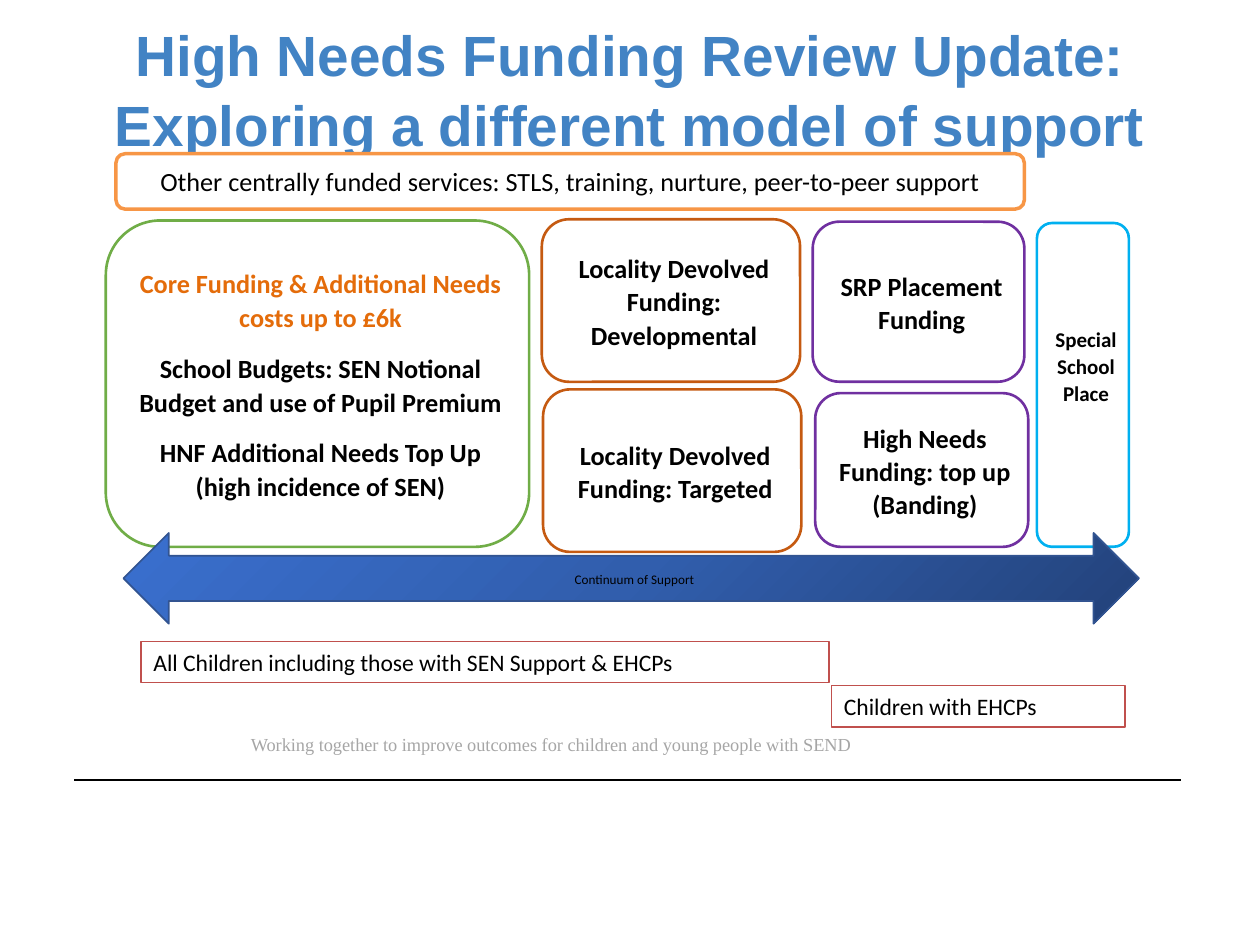
from dataclasses import dataclass
from lxml import etree
from pptx import Presentation
from pptx.dml.color import RGBColor
from pptx.enum.shapes import MSO_CONNECTOR, MSO_SHAPE
from pptx.enum.text import MSO_ANCHOR, PP_ALIGN
from pptx.oxml import parse_xml
from pptx.oxml.ns import nsdecls, qn
from pptx.util import Inches, Length, Pt

ROUND = MSO_SHAPE.ROUNDED_RECTANGLE
RECT = MSO_SHAPE.RECTANGLE
ARROW = MSO_SHAPE.LEFT_RIGHT_ARROW
STRAIGHT = MSO_CONNECTOR.STRAIGHT
MIDDLE, TOP = MSO_ANCHOR.MIDDLE, MSO_ANCHOR.TOP
LEFT, CENTER = PP_ALIGN.LEFT, PP_ALIGN.CENTER
WIDE, HIGH = Inches(10), Inches(7.5)
COLS, ROWS = 100, 75


@dataclass(frozen=True)
class Theme:
    """Colours, fonts and type sizes of the slide."""
    white: str = "FFFFFF"
    black: str = "000000"
    grey: str = "A6A6A6"
    title: str = "4283C4"
    accent: str = "E46C0A"
    amber: str = "F79646"
    green: str = "70AD47"
    rust: str = "C55A11"
    purple: str = "7030A0"
    sky: str = "00B0F0"
    red: str = "C0504D"
    edge: str = "325491"
    fade: tuple[str, ...] = ("23427A", "315EAD", "3A6FCE")
    sans: str = "Calibri"
    serif: str = "Times New Roman"
    head: str = "Arial"
    huge: float = 32.4
    body: float = 15
    label: float = 13.5
    small: float = 12
    foot: float = 10.5
    tiny: float = 7.5


T = Theme()


@dataclass(frozen=True)
class Area:
    """A place on the grid, in columns and rows."""
    col: float
    row: float
    cols: float
    rows: float


@dataclass(frozen=True)
class Style:
    """How the text of one element is set."""
    size: float
    font: str = T.sans
    color: str = T.black
    bold: bool = False
    align: PP_ALIGN = CENTER
    anchor: MSO_ANCHOR = MIDDLE
    pitch: float = 1
    spaced: bool = False
    side: float = 0.1
    base: float = 0.05


@dataclass(frozen=True)
class Box:
    """An outlined shape with its text."""
    area: Area
    lines: tuple[str, ...]
    edge: str
    style: Style
    kind: MSO_SHAPE = ROUND
    width: float = 1.5
    fill: str | None = T.white


CARD = Style(T.body, bold=True, pitch=1.06, spaced=True, side=0.07, base=0.04)
CORE = Style(T.body, bold=True, pitch=1.07, spaced=True, side=0.07, base=0.04)
SLIM = Style(T.small, bold=True, pitch=1.06, spaced=True, side=0, base=0.36)
FLOW = Style(T.tiny, pitch=1.07, spaced=True, side=0.07, base=0.04)
LABEL = Style(T.label, align=LEFT, anchor=TOP)
FOOT = Style(T.foot, T.serif, T.grey, anchor=TOP)
TITLE = Style(T.huge, T.head, T.title, bold=True, pitch=1.04)

FOOTER = "Working together to improve outcomes for children and young people with SEND"
HEADING = "High Needs Funding Review Update: Exploring a different model of support"

CARDS = (
    Box(Area(82.3, 17.7, 7.3, 25.7), ("Special School Place",), T.sky, SLIM),
    Box(Area(64.7, 31.2, 16.9, 12.2), ("High Needs Funding: top up (Banding)",), T.purple, CARD),
    Box(Area(43, 17.4, 20.5, 12.9), ("Locality Devolved Funding: Developmental",), T.rust, CARD),
    Box(Area(8.4, 17.5, 33.6, 25.9), (
        "Core Funding & Additional Needs costs up to £6k",
        "School Budgets: SEN Notional Budget and use of Pupil Premium",
        "HNF Additional Needs Top Up (high incidence of SEN)"), T.green, CORE),
    Box(Area(64.5, 17.6, 16.8, 12.7), ("SRP Placement Funding",), T.purple, CARD),
    Box(Area(43.1, 30.9, 20.5, 12.9), ("Locality Devolved Funding: Targeted",), T.rust, CARD),
)
FLOWBAR = Box(Area(9.8, 42.3, 80.6, 7.2), ("Continuum of Support",), T.edge, FLOW, ARROW, 1)
LABELS = (
    Box(Area(11.2, 50.9, 54.6, 3.3), ("All Children including those with SEN Support & EHCPs",),
        T.red, LABEL, RECT, 0.75, None),
    Box(Area(66, 54.4, 23.3, 3.3), ("Children with EHCPs",), T.red, LABEL, RECT, 0.75, None),
)
BANNER = Box(Area(9.2, 12.2, 72.1, 4.4),
             ("Other centrally funded services: STLS, training, nurture, peer-to-peer support",),
             T.amber, Style(T.body), width=2)


def place(area: Area) -> tuple[Length, ...]:
    """Turn grid units into slide lengths."""
    wide, high = WIDE / COLS, HIGH / ROWS
    return tuple(Length(round(n)) for n in (
        area.col * wide, area.row * high, area.cols * wide, area.rows * high))


def write(shape, lines: tuple[str, ...], style: Style) -> None:
    """Set the paragraphs of a shape in one style."""
    frame = shape.text_frame
    frame.text = "\n".join(lines)
    frame.word_wrap = True
    frame.vertical_anchor = style.anchor
    frame.margin_left = frame.margin_right = Inches(style.side)
    frame.margin_top = Inches(min(style.base, 0.05))
    frame.margin_bottom = Inches(style.base)
    for rank, para in enumerate(frame.paragraphs):
        para.alignment = style.align
        para.line_spacing = style.pitch
        if style.spaced:
            para._p.get_or_add_pPr().set("marL", str(Inches(0.05)))
            para.space_before = Pt(3.8 if rank else 0)
            para.space_after = Pt(6)
        for run in para.runs:
            font = run.font
            font.name, font.size, font.bold = style.font, Pt(style.size), style.bold
            font.color.rgb = RGBColor.from_string(style.color)


def draw(slide, box: Box):
    """Add one outlined shape with its text."""
    shape = slide.shapes.add_shape(box.kind, *place(box.area))
    shape.shadow.inherit = False
    if box.fill:
        shape.fill.solid()
        shape.fill.fore_color.rgb = RGBColor.from_string(box.fill)
    else:
        shape.fill.background()
    shape.line.color.rgb = RGBColor.from_string(box.edge)
    shape.line.width = Pt(box.width)
    write(shape, box.lines, box.style)
    return shape


def shade(shape, tints: tuple[str, ...]) -> None:
    """Fill a shape with a radial gradient from its lower right corner."""
    step = 100000 // (len(tints) - 1)
    stops = "".join(f'<a:gs pos="{n * step}"><a:srgbClr val="{tint}"/></a:gs>'
                    for n, tint in enumerate(tints))
    grad = parse_xml(f'<a:gradFill {nsdecls("a")} rotWithShape="1"><a:gsLst>{stops}</a:gsLst>'
                     '<a:path path="circle"><a:fillToRect l="100000" t="100000"/></a:path>'
                     '</a:gradFill>')
    props = shape._element.spPr
    props.replace(props.find(qn("a:solidFill")), grad)


def note(slide, area: Area, text: str, style: Style) -> None:
    """Add a plain text box."""
    write(slide.shapes.add_textbox(*place(area)), (text,), style)


def rule(slide, area: Area) -> None:
    """Add a thin straight line."""
    left, top, wide, high = place(area)
    line = slide.shapes.add_connector(STRAIGHT, left, top, left + wide, top + high)
    line.line.color.rgb = RGBColor.from_string(T.black)
    line.line.width = Pt(1)
    etree.SubElement(line._element.spPr, qn("a:effectLst"))


def main() -> None:
    """Build the slide and save it."""
    deck = Presentation()
    deck.slide_width, deck.slide_height = WIDE, HIGH
    slide = deck.slides.add_slide(deck.slide_layouts[6])
    rule(slide, Area(5.9, 61.9, 87.8, 0))
    note(slide, Area(16.3, 57.7, 54.9, 2.8), FOOTER, FOOT)
    note(slide, Area(0, 0.9, 100, 12.1), HEADING, TITLE)
    for card in CARDS:
        shape = draw(slide, card)
        if card.style is CORE:
            lead = shape.text_frame.paragraphs[0].runs[0]
            lead.font.color.rgb = RGBColor.from_string(T.accent)
    shade(draw(slide, FLOWBAR), T.fade)
    for box in (*LABELS, BANNER):
        draw(slide, box)
    deck.save("out.pptx")


if __name__ == "__main__":
    main()
